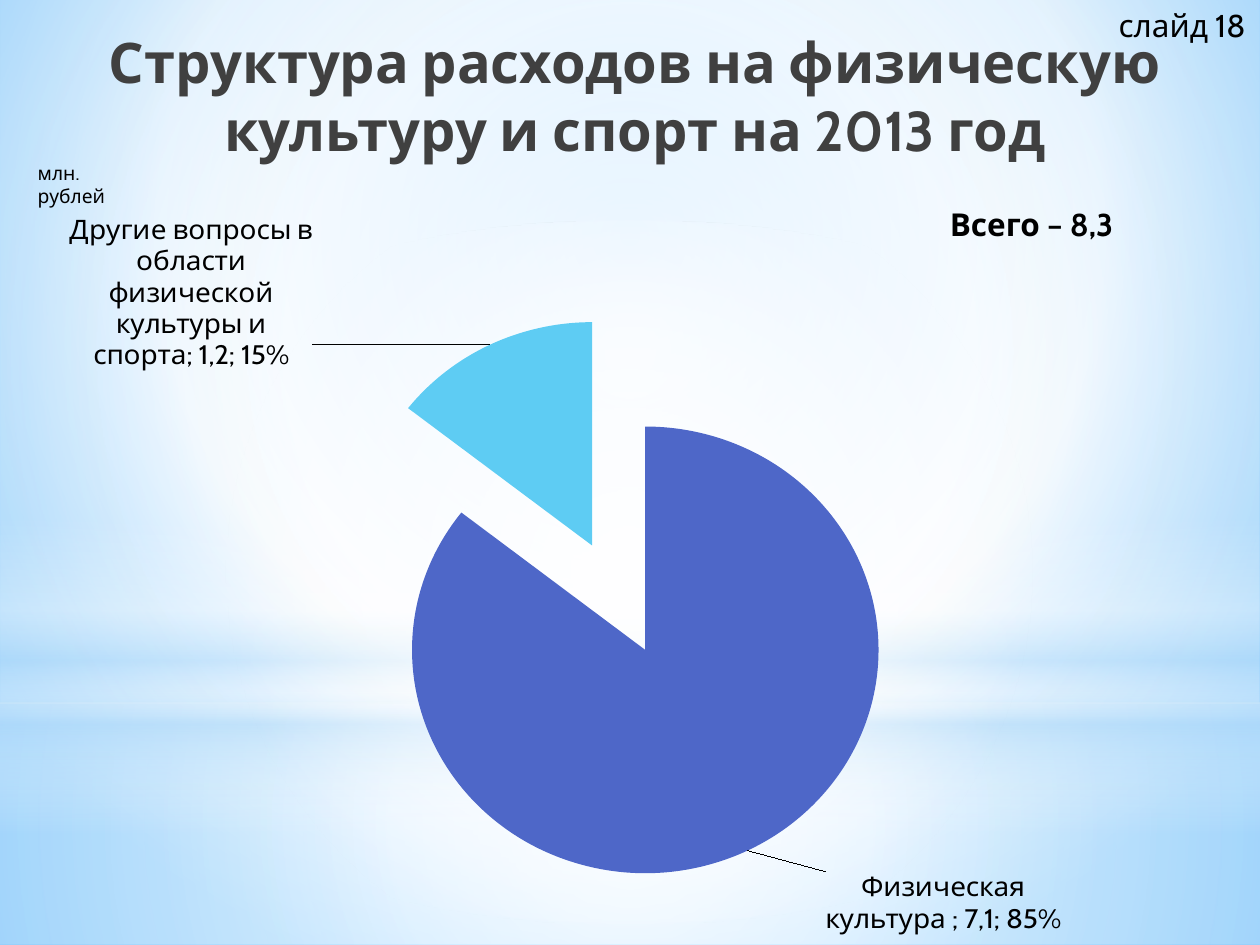
"""Build the slide on spending for physical culture and sport in 2013."""
from dataclasses import dataclass
from typing import Optional

from lxml import etree
from pptx import Presentation
from pptx.chart import data as chart_data
from pptx.dml.color import RGBColor
from pptx.enum import chart as charts, shapes, text
from pptx.oxml import ns
from pptx.util import Inches, Pt


@dataclass(frozen=True)
class Theme:
    """Colours, font and type sizes of the slide."""
    font: str = "Cabin"
    ink: str = "000000"
    heading: str = "404040"
    white: str = "FFFFFF"
    haze: str = "B4DCFA"
    sky: str = "9ED5FF"
    deep: str = "5BB9FF"
    title: int = 32
    body: int = 18
    label: int = 16
    small: int = 11


@dataclass(frozen=True)
class Gradient:
    """Stops of (position, colour, opacity) with a linear or circular course."""
    stops: tuple
    focus: Optional[tuple] = (50, 50, 50, 50)


@dataclass(frozen=True)
class Layer:
    """A translucent background shape."""
    kind: shapes.MSO_SHAPE
    top: float
    height: float
    gradient: Gradient


@dataclass(frozen=True)
class Note:
    """A text box with its place and format."""
    words: str
    place: tuple
    size: int
    bold: bool = False
    wrap: bool = False


@dataclass(frozen=True)
class Slice:
    """A pie slice with its label and the label's shift."""
    name: str
    value: float
    label: str
    colour: str
    shift: tuple


THEME = Theme()
BACKDROP = Gradient(((0, THEME.sky, 100), (60, THEME.white, 100), (100, THEME.deep, 100)),
                    (20, 10, 20, 60))
RECT, OVAL = shapes.MSO_SHAPE.RECTANGLE, shapes.MSO_SHAPE.OVAL
LAYERS = (
    Layer(RECT, 5.58, 1.92, Gradient(
        ((0, THEME.white, 91), (37, THEME.white, 76), (100, THEME.haze, 79)))),
    Layer(RECT, 0, 5.58, Gradient(
        ((0, THEME.white, 89), (48, THEME.white, 62), (100, THEME.haze, 79)))),
    Layer(RECT, 4.12, 2.5, Gradient(
        ((0, THEME.white, 0), (29, THEME.white, 30), (45, THEME.haze, 40),
         (55, THEME.white, 26), (65, THEME.haze, 60), (100, THEME.white, 0)), None)),
    Layer(OVAL, 1.75, 5.58, Gradient(((0, THEME.white, 100), (56, THEME.white, 0)))),
)
NOTES = (
    Note("млн. рублей", (0.2, 1.23, 1.1, 0.31), THEME.small),
    Note("Всего – 8,3", (7.44, 1.58, 2.44, 0.4), THEME.body, bold=True, wrap=True),
    Note("слайд 18", (8.78, 0, 1.23, 0.4), THEME.body),
)
SLICES = (
    Slice("Физическая культура ", 7.1, "Физическая культура ; 7,1; 85%",
          "4E67C8", (0.06, 0.02)),
    Slice("Другие вопросы в области физической культуры и спорта", 1.2,
          "Другие вопросы в области физической культуры и спорта; 1,2; 15%",
          "5ECCF3", (-0.14, 0.04)),
)


def add_node(parent, tag: str, **attributes):
    """Append an XML child given by its prefixed tag."""
    return etree.SubElement(parent, ns.qn(tag), {k: str(v) for k, v in attributes.items()})


def paint_gradient(owner, fill, gradient: Gradient) -> None:
    """Fill a shape or a slide background with a gradient."""
    fill.solid()
    solid = owner.find(".//" + ns.qn("a:solidFill"))
    node = etree.Element(ns.qn("a:gradFill"), rotWithShape="1")
    stops = add_node(node, "a:gsLst")
    for position, colour, opacity in gradient.stops:
        stop = add_node(stops, "a:gs", pos=position * 1000)
        add_node(add_node(stop, "a:srgbClr", val=colour), "a:alpha", val=opacity * 1000)
    if gradient.focus:
        sides = {side: share * 1000 for side, share in zip("ltrb", gradient.focus)}
        add_node(add_node(node, "a:path", path="circle"), "a:fillToRect", **sides)
    else:
        add_node(node, "a:lin", ang=90 * 60000, scaled=0)
    solid.getparent().replace(solid, node)


def write(frame, words: str, *, size: int, colour: str = THEME.ink, bold: bool = False,
          align: Optional[text.PP_ALIGN] = None) -> None:
    """Put formatted words into a text frame."""
    para = frame.paragraphs[0]
    para.alignment = align
    span = para.add_run()
    span.text = words
    span.font.name, span.font.size, span.font.bold = THEME.font, Pt(size), bold
    span.font.color.rgb = RGBColor.from_string(colour)


def add_layer(page, layer: Layer) -> None:
    """Draw one background layer across the page."""
    shape = page.shapes.add_shape(layer.kind, 0, Inches(layer.top), Inches(10),
                                  Inches(layer.height))
    shape.shadow.inherit = False
    shape.line.fill.background()
    paint_gradient(shape.element.spPr, shape.fill, layer.gradient)


def add_note(page, note: Note) -> None:
    """Draw one text box."""
    box = page.shapes.add_textbox(*map(Inches, note.place))
    box.text_frame.word_wrap = note.wrap
    write(box.text_frame, note.words, size=note.size, bold=note.bold)


def make_layout(**values):
    """Return a manual chart layout element."""
    layout = etree.Element(ns.qn("c:layout"))
    manual = add_node(layout, "c:manualLayout")
    for key, value in values.items():
        add_node(manual, "c:" + key, val=value)
    return layout


def add_pie(page) -> None:
    """Draw the exploded pie with its labels and leader lines."""
    figures = chart_data.CategoryChartData(number_format="0.0")
    figures.categories = [part.name for part in SLICES]
    figures.add_series("Series 1", [part.value for part in SLICES])
    frame = page.shapes.add_chart(charts.XL_CHART_TYPE.PIE,
                                  *map(Inches, (0.04, 1.44, 9.84, 6.06)), figures)
    chart = frame.chart
    chart.has_legend = chart.has_title = False
    chart.font.name, chart.font.size = THEME.font, Pt(THEME.body)
    chart.font.color.rgb = RGBColor.from_string(THEME.ink)
    area = chart.element.find(".//" + ns.qn("c:plotArea"))
    for old in area.findall(ns.qn("c:layout")):
        area.remove(old)
    area.insert(0, make_layout(layoutTarget="inner", xMode="edge", yMode="edge",
                               x=0.1, y=0.14, w=0.79, h=0.77))
    series = chart.plots[0].series[0]
    series_node = area.find(".//" + ns.qn("c:ser"))
    labels = series.data_labels
    labels.show_category_name = labels.show_value = labels.show_percentage = True
    labels.font.size = Pt(THEME.label)
    labels.position = charts.XL_LABEL_POSITION.OUTSIDE_END
    for index, part in enumerate(SLICES):
        point = series.points[index]
        point.format.fill.solid()
        point.format.fill.fore_color.rgb = RGBColor.from_string(part.colour)
        label = point.data_label
        write(label.text_frame, part.label, size=THEME.label)
        label.position = charts.XL_LABEL_POSITION.OUTSIDE_END
        node = series_node.findall(".//" + ns.qn("c:dLbl"))[index]
        node.insert(1, make_layout(x=part.shift[0], y=part.shift[1]))
        for flag in ("c:showCatName", "c:showVal", "c:showPercent"):
            node.find(ns.qn(flag)).set("val", "1")
    group = series_node.find(ns.qn("c:dLbls"))
    leader = group.find(ns.qn("c:showLeaderLines"))
    if leader is None:
        leader = add_node(group, "c:showLeaderLines")
    leader.set("val", "1")
    explosion = etree.Element(ns.qn("c:explosion"), val="26")
    series_node.find(ns.qn("c:dPt")).addprevious(explosion)


def main() -> None:
    """Build and save the deck."""
    deck = Presentation()
    deck.slide_width, deck.slide_height = Inches(10), Inches(7.5)
    page = deck.slides.add_slide(deck.slide_layouts[5])
    paint_gradient(page.element, page.background.fill, BACKDROP)
    for layer in LAYERS:
        add_layer(page, layer)
    title = page.shapes.title
    title.element.getparent().append(title.element)
    title.left, title.top, title.width, title.height = map(Inches, (0.75, 0.13, 8.58, 1.25))
    write(title.text_frame, "Структура расходов на физическую культуру и спорт на 2013 год",
          size=THEME.title, colour=THEME.heading, bold=True, align=text.PP_ALIGN.CENTER)
    add_pie(page)
    for note in NOTES:
        add_note(page, note)
    deck.save("out.pptx")


if __name__ == "__main__":
    main()
